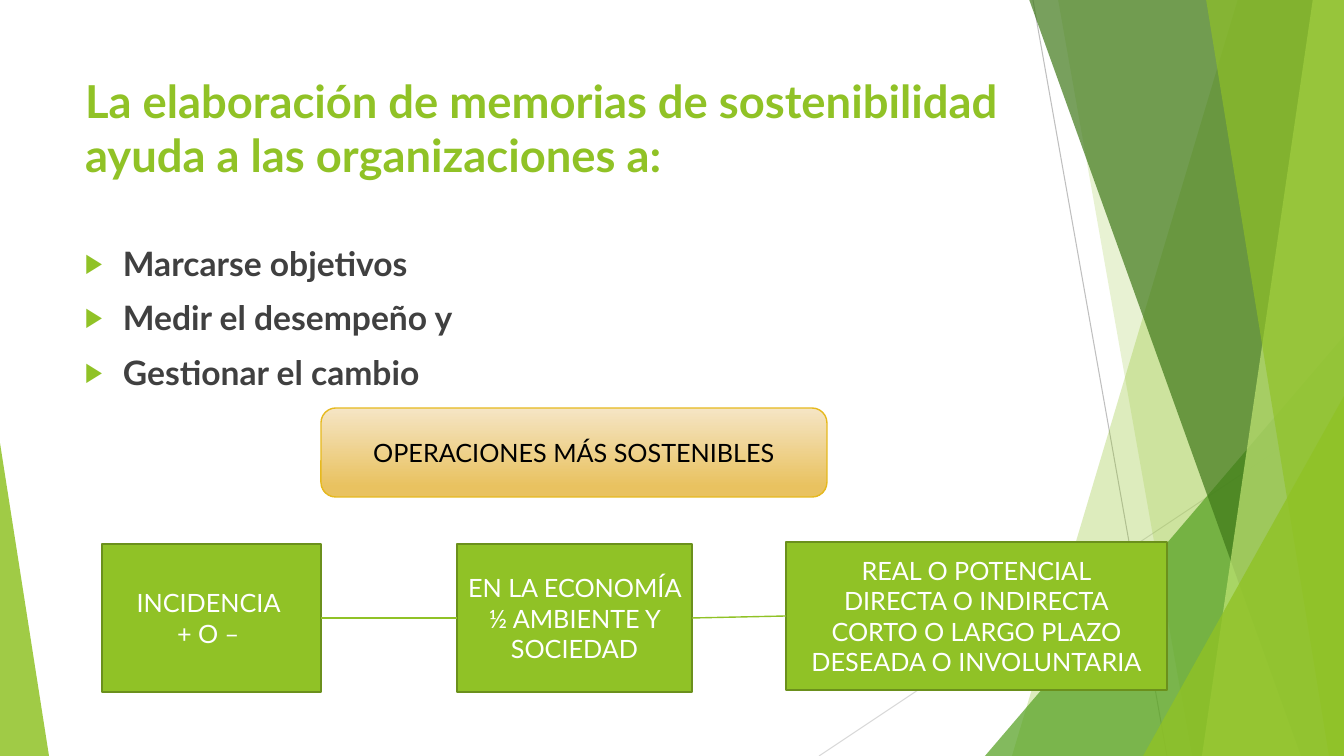
from lxml import etree
from pptx import Presentation
from pptx.dml.color import RGBColor
from pptx.enum.shapes import MSO_CONNECTOR, MSO_SHAPE
from pptx.enum.text import MSO_ANCHOR, MSO_AUTO_SIZE, PP_ALIGN
from pptx.oxml.ns import qn
from pptx.util import Pt

STRAIGHT = MSO_CONNECTOR.STRAIGHT
RECT, ROUND = MSO_SHAPE.RECTANGLE, MSO_SHAPE.ROUNDED_RECTANGLE
TRI = MSO_SHAPE.ISOSCELES_TRIANGLE
TOP, MIDDLE = MSO_ANCHOR.TOP, MSO_ANCHOR.MIDDLE
LEFT, CENTER = PP_ALIGN.LEFT, PP_ALIGN.CENTER
NO_FIT = MSO_AUTO_SIZE.NONE

SCALE = 914400 / 100.8  # EMU in one px
WIDE, HIGH = 1344, 756
FONT = "Lato"
COLORS = {
    "green": "90C226", "leaf": "54A021", "dark": "3F7819", "lime": "C0E474",
    "edge": "6B901C", "gold": "E6B91E", "cream": "F5E5C5", "sand": "E9C260",
    "gray": "BFBFBF", "pale": "D9D9D9", "text": "404040",
    "black": "000000", "white": "FFFFFF",
}


def emu(*sizes):
    return [round(size * SCALE) for size in sizes]


def rgb(name):
    return RGBColor.from_string(COLORS[name])


def style(frame, size, color, bold=False, align=LEFT):
    for para in frame.paragraphs:
        para.alignment = align
        for run in para.runs:
            font = run.font
            font.name, font.size, font.bold = FONT, Pt(size), bold
            font.color.rgb = rgb(color)


def line(slide, ends, color, width):
    link = slide.shapes.add_connector(STRAIGHT, *emu(*ends))
    link.line.color.rgb = rgb(color)
    link.line.width = Pt(width)
    etree.SubElement(link._element.spPr, qn("a:effectLst"))


def tint(shape, color, alpha):
    shape.shadow.inherit = False
    shape.fill.solid()
    shape.fill.fore_color.rgb = rgb(color)
    shape.line.fill.background()
    node = shape._element.spPr.find(".//" + qn("a:srgbClr"))
    etree.SubElement(node, qn("a:alpha"), val=str(alpha * 1000))


def band(slide, top, base, color, alpha):
    """Fill from a slanted edge to the right side of the slide."""
    path = slide.shapes.build_freeform(top, -1, scale=SCALE)
    path.add_line_segments([(WIDE, -1), (WIDE, HIGH), (base, HIGH)], close=True)
    tint(path.convert_to_shape(), color, alpha)


def wedge(slide, left, top, width, tip, color, alpha):
    """Right triangle that stands on the bottom edge."""
    shape = slide.shapes.add_shape(TRI, *emu(left, top, width, HIGH - top))
    shape.adjustments[0] = tip
    tint(shape, color, alpha)


def decor(slide):
    line(slide, (1033, 0, 1167, HIGH), "gray", 0.75)
    line(slide, (WIDE, 406, 819, HIGH), "pale", 0.75)
    band(slide, 1238, 1012, "green", 30)
    band(slide, 1058, 1192, "green", 20)
    wedge(slide, 985, 336, 359, 1, "leaf", 72)
    band(slide, 1029, 1301, "dark", 70)
    band(slide, 1313, 1202, "lime", 70)
    band(slide, 1206, 1329, "green", 65)
    wedge(slide, 1143, 396, 201, 1, "green", 80)
    wedge(slide, 0, 443, 49, 0, "green", 85)


def title(slide, place, text):
    shape = slide.shapes.title
    shape.left, shape.top, shape.width, shape.height = emu(*place)
    frame = shape.text_frame
    frame.text = text
    frame.word_wrap, frame.auto_size = True, NO_FIT
    frame.vertical_anchor = TOP
    style(frame, 32.4, "green", True)


def bullet(para):
    props = para._p.get_or_add_pPr()
    indent = emu(38)[0]
    props.set("marL", str(indent))
    props.set("indent", str(-indent))
    color = etree.SubElement(props, qn("a:buClr"))
    etree.SubElement(color, qn("a:srgbClr"), val=COLORS["green"])
    etree.SubElement(props, qn("a:buSzPct"), val="80000")
    etree.SubElement(props, qn("a:buFont"), typeface="Arial")
    etree.SubElement(props, qn("a:buChar"), char="▶")


def bullets(slide, place, items):
    frame = slide.shapes.add_textbox(*emu(*place)).text_frame
    frame.word_wrap = True
    frame.text = "\n".join(items)
    for index, para in enumerate(frame.paragraphs):
        bullet(para)
        para.space_before = Pt(10 if index else 0)
    style(frame, 24, "text", True)


def box(slide, kind, place, text, edge, width, color):
    shape = slide.shapes.add_shape(kind, *emu(*place))
    shape.shadow.inherit = False
    shape.fill.solid()
    shape.fill.fore_color.rgb = rgb("green")
    shape.line.color.rgb = rgb(edge)
    shape.line.width = Pt(width)
    frame = shape.text_frame
    frame.text = text
    frame.word_wrap = True
    frame.vertical_anchor = MIDDLE
    style(frame, 18, color, align=CENTER)
    return shape


def blend(shape, first, last, end):
    fill = shape.fill
    fill.gradient()
    fill.gradient_angle = 270
    for stop, color, spot in zip(fill.gradient_stops, (first, last), (0, end)):
        stop.color.rgb = rgb(color)
        stop.position = spot


def main():
    deck = Presentation()
    deck.slide_width, deck.slide_height = emu(WIDE, HIGH)
    slide = deck.slides.add_slide(deck.slide_layouts[5])

    # Background facets
    decor(slide)

    # Title and aims
    title(slide, (75, 68, 948, 145),
          "La elaboración de memorias de sostenibilidad ayuda a las organizaciones a:")
    bullets(slide, (75, 238, 948, 427),
            ["Marcarse objetivos", "Medir el desempeño y", "Gestionar el cambio"])

    # Result
    goal = box(slide, ROUND, (321, 408, 506, 89), "OPERACIONES MÁS SOSTENIBLES",
               "gold", 1, "black")
    blend(goal, "cream", "sand", 0.88)

    # Chain of impacts
    chain = [
        ((102, 544, 219, 148), "INCIDENCIA \n+ O – "),
        ((457, 544, 235, 148), "EN LA ECONOMÍA ½ AMBIENTE Y SOCIEDAD"),
        ((786, 542, 381, 148), "REAL O POTENCIAL\nDIRECTA O INDIRECTA\n"
                               "CORTO O LARGO PLAZO\nDESEADA O INVOLUNTARIA"),
    ]
    for place, text in chain:
        box(slide, RECT, place, text, "edge", 1.5, "white")
    for (here, _), (there, _) in zip(chain, chain[1:]):
        line(slide, (here[0] + here[2], here[1] + here[3] / 2,
                     there[0], there[1] + there[3] / 2), "green", 1)

    deck.save("out.pptx")


if __name__ == "__main__":
    main()
